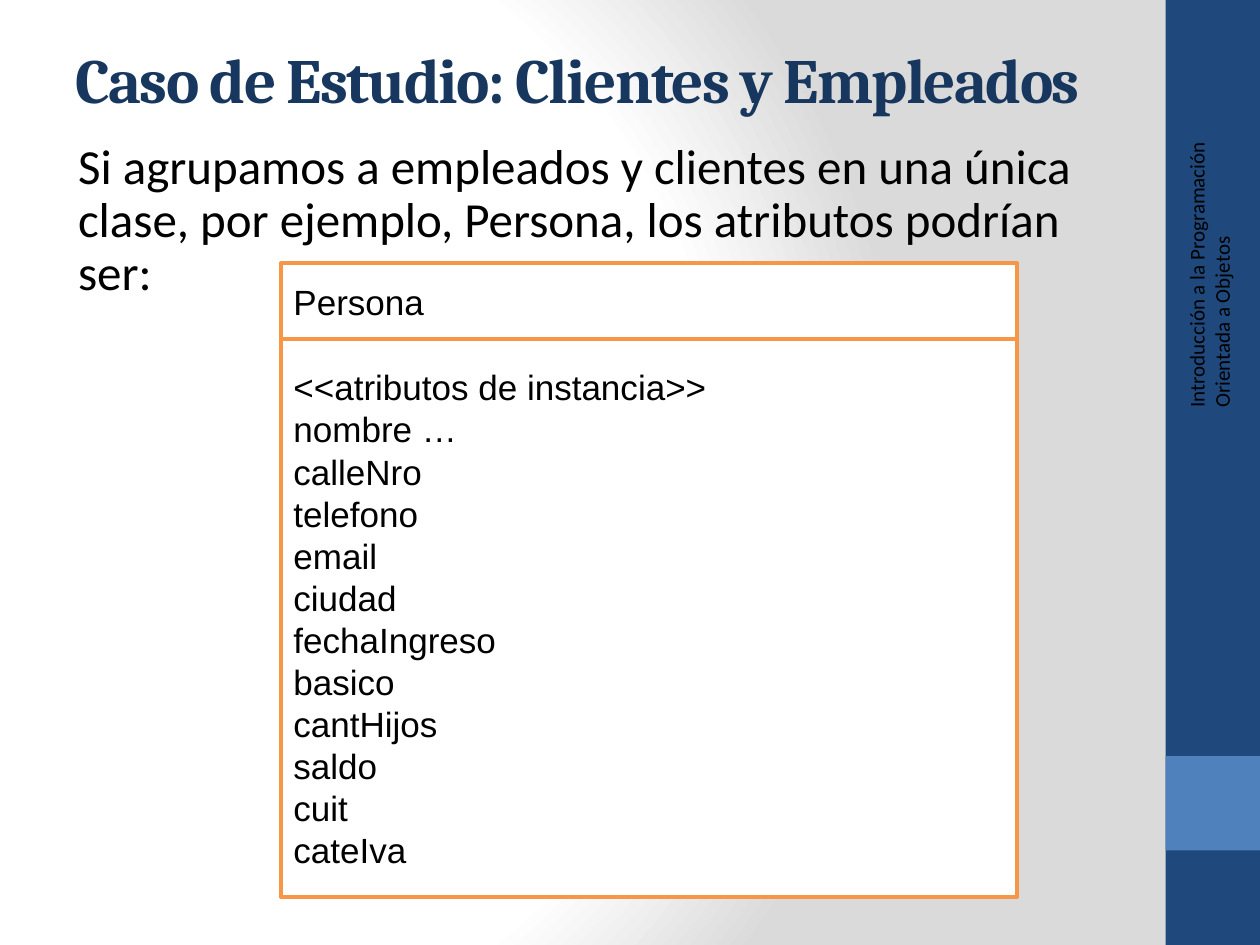
from dataclasses import dataclass

from lxml import etree
from pptx import Presentation
from pptx.dml.color import RGBColor
from pptx.enum.shapes import MSO_SHAPE
from pptx.enum.text import MSO_ANCHOR, MSO_AUTO_SIZE, PP_ALIGN
from pptx.oxml import parse_xml
from pptx.oxml.ns import nsdecls, qn
from pptx.util import Pt

RECTANGLE = MSO_SHAPE.RECTANGLE
TOP, MIDDLE = MSO_ANCHOR.TOP, MSO_ANCHOR.MIDDLE
LEFT = PP_ALIGN.LEFT
NO_AUTOFIT = MSO_AUTO_SIZE.NONE


@dataclass(frozen=True)
class Theme:
    white: str = "FFFFFF"
    grey: str = "DADADA"
    navy: str = "1F497D"
    blue: str = "4F81BD"
    orange: str = "F79646"
    title_color: str = "17375E"
    text_color: str = "000000"
    title_font: str = "Cambria"
    body_font: str = "Calibri"
    class_font: str = "Arial"
    title_size: int = 36
    body_size: int = 28
    class_size: int = 20
    sidebar_size: int = 12
    border: int = 2


class SlideBuilder:
    def __init__(self, slide, theme):
        self.slide = slide
        self.theme = theme

    def _place(self, shape, box):
        shape.left, shape.top, shape.width, shape.height = map(Pt, box)

    def _write(self, shape, text, font, size, color, anchor=MIDDLE, bold=False):
        frame = shape.text_frame
        frame.text = text
        frame.word_wrap = True
        frame.auto_size = NO_AUTOFIT
        frame.vertical_anchor = anchor
        for paragraph in frame.paragraphs:
            paragraph.alignment = LEFT
            for run in paragraph.runs:
                run.font.name = font
                run.font.size = Pt(size)
                run.font.bold = bold
                run.font.color.rgb = RGBColor.from_string(color)
        return frame

    def background(self):
        fill = self.slide.background.fill
        fill.gradient()
        stops = ((0, self.theme.white), (75, self.theme.white), (100, self.theme.grey))
        stop_xml = "".join(
            f'<a:gs pos="{position * 1000}"><a:srgbClr val="{color}"/></a:gs>'
            for position, color in stops
        )
        radial = parse_xml(
            f'<a:gradFill {nsdecls("a")} rotWithShape="1"><a:gsLst>{stop_xml}</a:gsLst>'
            '<a:path path="circle"><a:fillToRect l="20000" t="50000" r="100000" b="50000"/>'
            "</a:path></a:gradFill>"
        )
        linear = next(self.slide.element.iter(qn("a:gradFill")))
        linear.getparent().replace(linear, radial)

    def title(self, text, box):
        heading = self.slide.shapes.title
        self._place(heading, box)
        theme = self.theme
        frame = self._write(heading, text, theme.title_font, theme.title_size,
                            theme.title_color, bold=True)
        # Tighten the letter spacing by one point
        frame.paragraphs[0].runs[0].font._element.set("spc", "-100")

    def body(self, text, box):
        intro = self.slide.placeholders[1]
        self._place(intro, box)
        theme = self.theme
        frame = self._write(intro, text, theme.body_font, theme.body_size,
                            theme.text_color, anchor=TOP)
        frame.paragraphs[0].line_spacing = 0.9
        frame.paragraphs[0].space_before = Pt(0)

    def rectangle(self, box, fill, line=None):
        panel = self.slide.shapes.add_shape(RECTANGLE, *map(Pt, box))
        panel.shadow.inherit = False
        panel.fill.solid()
        panel.fill.fore_color.rgb = RGBColor.from_string(fill)
        if line:
            panel.line.color.rgb = RGBColor.from_string(line)
            panel.line.width = Pt(self.theme.border)
        else:
            panel.line.fill.background()
        return panel

    def class_section(self, lines, box):
        theme = self.theme
        section = self.rectangle(box, theme.white, theme.orange)
        self._write(section, "\n".join(lines), theme.class_font, theme.class_size,
                    theme.text_color)

    def sidebar_label(self, text, box):
        label = self.slide.shapes.add_textbox(*map(Pt, box))
        label.rotation = 270
        theme = self.theme
        self._write(label, text, theme.body_font, theme.sidebar_size, theme.text_color)


def main():
    theme = Theme()
    presentation = Presentation()
    presentation.slide_width, presentation.slide_height = Pt(720), Pt(540)
    slide = presentation.slides.add_slide(presentation.slide_layouts[0])
    builder = SlideBuilder(slide, theme)
    builder.background()

    # Sidebar
    sidebar_left, sidebar_width = 666, 54
    builder.rectangle((sidebar_left, 0, sidebar_width, 540), theme.navy)
    builder.rectangle((sidebar_left, 432, sidebar_width, sidebar_width), theme.blue)
    builder.sidebar_label("Introducción a la Programación Orientada a Objetos",
                          (594.7, 129.6, 192.2, 28.8))

    # Title and introduction
    builder.title("Caso de Estudio: Clientes y Empleados", (36, 0, 624, 90))
    builder.body(
        "Si agrupamos a empleados y clientes en una única clase, por ejemplo, "
        "Persona, los atributos podrían ser:",
        (37.4, 77.8, 622.8, 415.4),
    )

    # Class diagram: name above attributes
    attributes = ["<<atributos de instancia>>", "nombre …", "calleNro", "telefono",
                  "email", "ciudad", "fechaIngreso", "basico", "cantHijos", "saldo",
                  "cuit", "cateIva"]
    class_left, class_top, class_width = 160.6, 150.4, 420.6
    name_height, attributes_height = 43.3, 319
    builder.class_section(["Persona"], (class_left, class_top, class_width, name_height))
    builder.class_section(attributes, (class_left, class_top + name_height,
                                       class_width, attributes_height))

    presentation.save("out.pptx")


if __name__ == "__main__":
    main()
